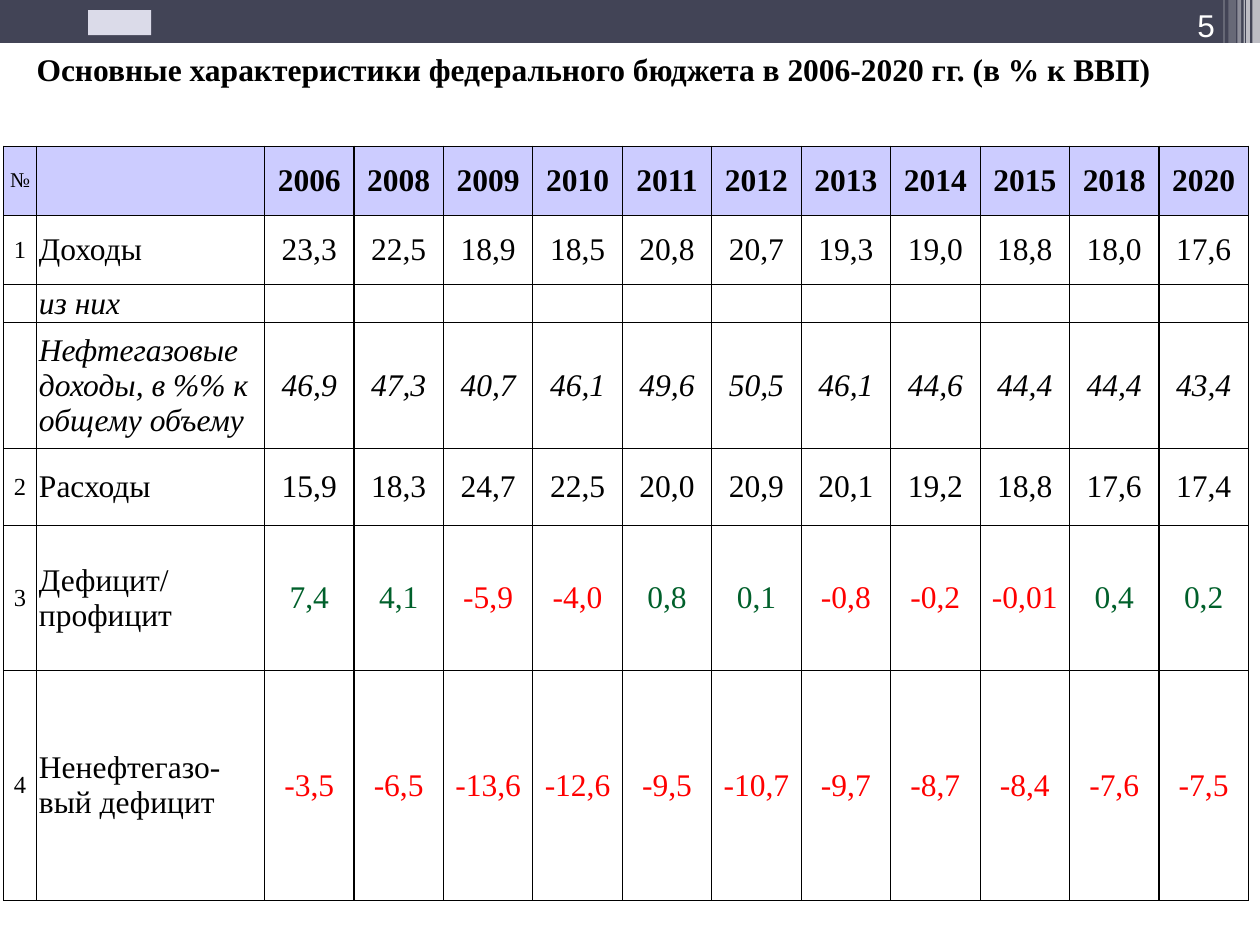
from lxml.etree import SubElement
from pptx import Presentation
from pptx.dml.color import RGBColor
from pptx.enum.shapes import MSO_SHAPE
from pptx.enum.text import MSO_ANCHOR, MSO_AUTO_SIZE, PP_ALIGN
from pptx.oxml import parse_xml
from pptx.oxml.ns import nsdecls, qn
from pptx.util import Inches, Pt

INK = {"bar": "424456", "white": "FFFFFF", "mark": "DBDBE9", "black": "000000",
       "head": "CCCCFF", "plus": "00602B", "minus": "FF0000"}
SERIF = "Times New Roman"

# Stripes at the right end of the bar: left, width, height, opacity in %
STRIPES = [(9.94, 0.06, 0.68, 65), (9.89, 0.03, 0.68, 65), (9.87, 0.01, 0.68, 60),
           (9.82, 0.03, 0.68, 40), (9.75, 0.06, 0.64, 20), (9.71, 0.01, 0.64, 30)]

# Table rows: height, number, label, values, style
ROWS = [
    (0.55, "№", "", "2006 2008 2009 2010 2011 2012 2013 2014 2015 2018 2020", "head"),
    (0.55, "1", "Доходы", "23,3 22,5 18,9 18,5 20,8 20,7 19,3 19,0 18,8 18,0 17,6", "plain"),
    (0.3, "", "из них", "", "italic"),
    (1, "", "Нефтегазовые доходы, в %% к общему объему",
     "46,9 47,3 40,7 46,1 49,6 50,5 46,1 44,6 44,4 44,4 43,4", "italic"),
    (0.61, "2", "Расходы", "15,9 18,3 24,7 22,5 20,0 20,9 20,1 19,2 18,8 17,6 17,4", "plain"),
    (1.15, "3", "Дефицит/профицит",
     "7,4 4,1 -5,9 -4,0 0,8 0,1 -0,8 -0,2 -0,01 0,4 0,2", "signed"),
    (1.83, "4", "Ненефтегазо-вый дефицит",
     "-3,5 -6,5 -13,6 -12,6 -9,5 -10,7 -9,7 -8,7 -8,4 -7,6 -7,5", "signed"),
]
COLS = [0.26, 1.81] + [0.71] * 11


def apply(obj, form):
    for key, val in form.items():
        setattr(obj, key, val)


def write(frame, text, ink, align=PP_ALIGN.LEFT, **form):
    para = frame.paragraphs[0]
    para.alignment = align
    if text:
        run = para.add_run()
        run.text = text
        apply(run.font, {"name": SERIF, "size": Pt(18)} | form)
        run.font.color.rgb = RGBColor.from_string(INK[ink])


def block(slide, box, ink, alpha=100):
    shape = slide.shapes.add_shape(MSO_SHAPE.RECTANGLE, *map(Inches, box))
    shape.shadow.inherit = False
    shape.line.fill.background()
    shape.fill.solid()
    shape.fill.fore_color.rgb = RGBColor.from_string(INK[ink])
    if alpha < 100:
        tint = shape.fill._xPr.find(qn("a:solidFill"))[0]
        SubElement(tint, qn("a:alpha")).set("val", str(alpha * 1000))


def border(cell):
    props = cell._tc.get_or_add_tcPr()
    for side in "LRTB":
        props.append(parse_xml(
            f'<a:ln{side} {nsdecls("a")} w="9525"><a:solidFill>'
            f'<a:srgbClr val="{INK["black"]}"/></a:solidFill></a:ln{side}>'))


def fill(cell, col, text, style):
    pad = Inches(0.02) if col == 1 else 0
    apply(cell, {"margin_left": pad, "margin_right": pad, "margin_top": 0,
                 "margin_bottom": 0, "vertical_anchor": MSO_ANCHOR.MIDDLE})
    border(cell)
    if style == "head":
        cell.fill.solid()
        cell.fill.fore_color.rgb = RGBColor.from_string(INK["head"])
    else:
        cell.fill.background()
    ink, size = "black", 18
    if col == 0:
        size = 12 if style == "head" else 14
    elif col > 1 and style == "signed":
        ink = "minus" if text.startswith("-") else "plus"
    write(cell.text_frame, text, ink, PP_ALIGN.LEFT if col == 1 else PP_ALIGN.CENTER,
          size=Pt(size), bold=style == "head" and col > 1, italic=style == "italic")


def grid(slide, left, top):
    high = sum(row[0] for row in ROWS)
    box = map(Inches, (left, top, sum(COLS), high))
    table = slide.shapes.add_table(len(ROWS), len(COLS), *box).table
    apply(table, {"first_row": False, "horz_banding": False})
    for col, wide in zip(table.columns, COLS):
        col.width = Inches(wide)
    for r, (tall, num, label, vals, style) in enumerate(ROWS):
        table.rows[r].height = Inches(tall)
        texts = [num, label] + (vals.split() or [""] * (len(COLS) - 2))
        for c, text in enumerate(texts):
            fill(table.cell(r, c), c, text, style)


def title(slide, text):
    shape = slide.shapes.title
    apply(shape, {"left": Inches(0.19), "top": Inches(0.35),
                  "width": Inches(10), "height": Inches(0.3)})
    apply(shape.text_frame, {"vertical_anchor": MSO_ANCHOR.TOP, "word_wrap": True,
                             "auto_size": MSO_AUTO_SIZE.NONE})
    write(shape.text_frame, text, "black", bold=True)


def number(slide, text):
    box = slide.shapes.add_textbox(*map(Inches, (8.91, 0, 0.83, 0.4)))
    apply(box.text_frame, {"word_wrap": True, "vertical_anchor": MSO_ANCHOR.BOTTOM})
    write(box.text_frame, text, "white", PP_ALIGN.RIGHT, name="Arial")


def main():
    deck = Presentation()
    apply(deck, {"slide_width": Inches(10), "slide_height": Inches(7.5)})
    slide = deck.slides.add_slide(deck.slide_layouts[5])
    # Top bar with stripes and a plain emblem
    block(slide, (0, 0, 10, 0.34), "bar")
    for left, wide, tall, alpha in STRIPES:
        block(slide, (left, 0, wide, tall), "white", alpha)
    block(slide, (0.7, 0.08, 0.5, 0.2), "mark")
    # Heading and page number
    title(slide, "Основные характеристики федерального бюджета в 2006-2020 гг. (в % к ВВП)")
    number(slide, "5")
    # Budget table
    grid(slide, 0.03, 1.16)
    deck.save("out.pptx")


if __name__ == "__main__":
    main()
